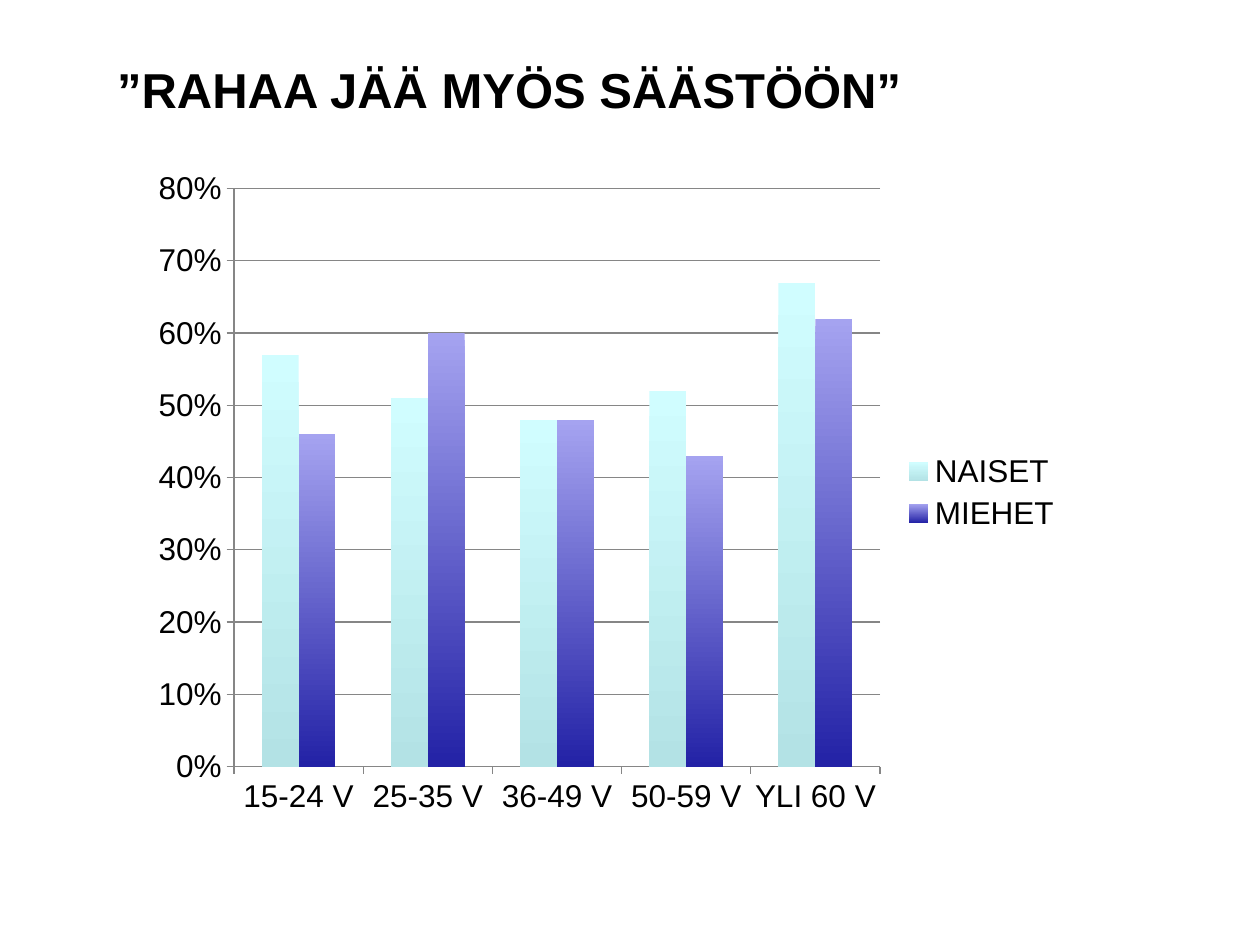
from pptx import Presentation
from pptx.chart.data import CategoryChartData
from pptx.dml.color import RGBColor
from pptx.enum.chart import XL_CHART_TYPE as ChartType
from pptx.enum.chart import XL_LEGEND_POSITION as LegendPosition
from pptx.enum.chart import XL_TICK_MARK as TickMark
from pptx.enum.text import MSO_ANCHOR as Anchor
from pptx.enum.text import PP_ALIGN as Align
from pptx.util import Inches, Pt


def color(hex_code):
    return RGBColor.from_string(hex_code)


class SlideBuilder:
    font_name = "Arial"
    text_color = "000000"
    line_color = "868686"

    def __init__(self, deck):
        self.page = deck.slides.add_slide(deck.slide_layouts[5])

    def style_font(self, font, **formats):
        for name, value in {"name": self.font_name, **formats}.items():
            setattr(font, name, value)
        font.color.rgb = color(self.text_color)

    def style_line(self, line):
        line.color.rgb = color(self.line_color)
        line.width = Pt(0.75)

    def title(self, text, left, top, width, height):
        box = self.page.shapes.title
        bounds = {"left": left, "top": top, "width": width, "height": height}
        for name, value in bounds.items():
            setattr(box, name, Inches(value))
        frame = box.text_frame
        frame.word_wrap = True
        frame.vertical_anchor = Anchor.TOP
        para = frame.paragraphs[0]
        para.alignment = Align.LEFT
        span = para.add_run()
        span.text = text
        self.style_font(span.font, size=Pt(28), bold=True)

    def column_chart(self, categories, series, gradients, left, top, width, height):
        data = CategoryChartData(number_format="0%")
        data.categories = categories
        for name, values in series.items():
            data.add_series(name, values)
        bounds = [Inches(value) for value in (left, top, width, height)]
        chart = self.page.shapes.add_chart(
            ChartType.COLUMN_CLUSTERED, *bounds, data).chart
        self.style_font(chart.font, size=Pt(18))
        chart.has_title = False

        # Legend
        chart.has_legend = True
        chart.legend.position = LegendPosition.RIGHT
        chart.legend.include_in_layout = False

        # Axes
        for axis in (chart.category_axis, chart.value_axis):
            axis.major_tick_mark = TickMark.OUTSIDE
            axis.minor_tick_mark = TickMark.NONE
            self.style_line(axis.format.line)
        values_axis = chart.value_axis
        scale = {"minimum_scale": 0, "maximum_scale": 0.8, "major_unit": 0.1}
        for name, value in scale.items():
            setattr(values_axis, name, value)
        values_axis.tick_labels.number_format = "0%"
        values_axis.tick_labels.number_format_is_linked = False
        self.style_line(values_axis.major_gridlines.format.line)

        # Columns, shaded from top to bottom
        plot = chart.plots[0]
        plot.vary_by_categories = False
        plot.gap_width = 150
        plot.overlap = 0
        for columns in plot.series:
            fill = columns.format.fill
            fill.gradient()
            fill.gradient_angle = 270
            for stop, shade in zip(fill.gradient_stops, gradients[columns.name]):
                stop.color.rgb = color(shade)
            columns.format.line.fill.background()


def main():
    deck = Presentation()
    deck.slide_width, deck.slide_height = Inches(10), Inches(7.5)
    builder = SlideBuilder(deck)

    builder.title("”RAHAA JÄÄ MYÖS SÄÄSTÖÖN”", 0.83, 0.42, 7.25, 0.83)
    builder.column_chart(
        ["15-24 V", "25-35 V", "36-49 V", "50-59 V", "YLI 60 V"],
        {"NAISET": (0.57, 0.51, 0.48, 0.52, 0.67),
         "MIEHET": (0.46, 0.6, 0.48, 0.43, 0.62)},
        {"NAISET": ("D0FDFF", "B3E2E5"), "MIEHET": ("A5A3F0", "2322A6")},
        1.11, 1.25, 7.42, 5.32)

    deck.save("out.pptx")


if __name__ == "__main__":
    main()
